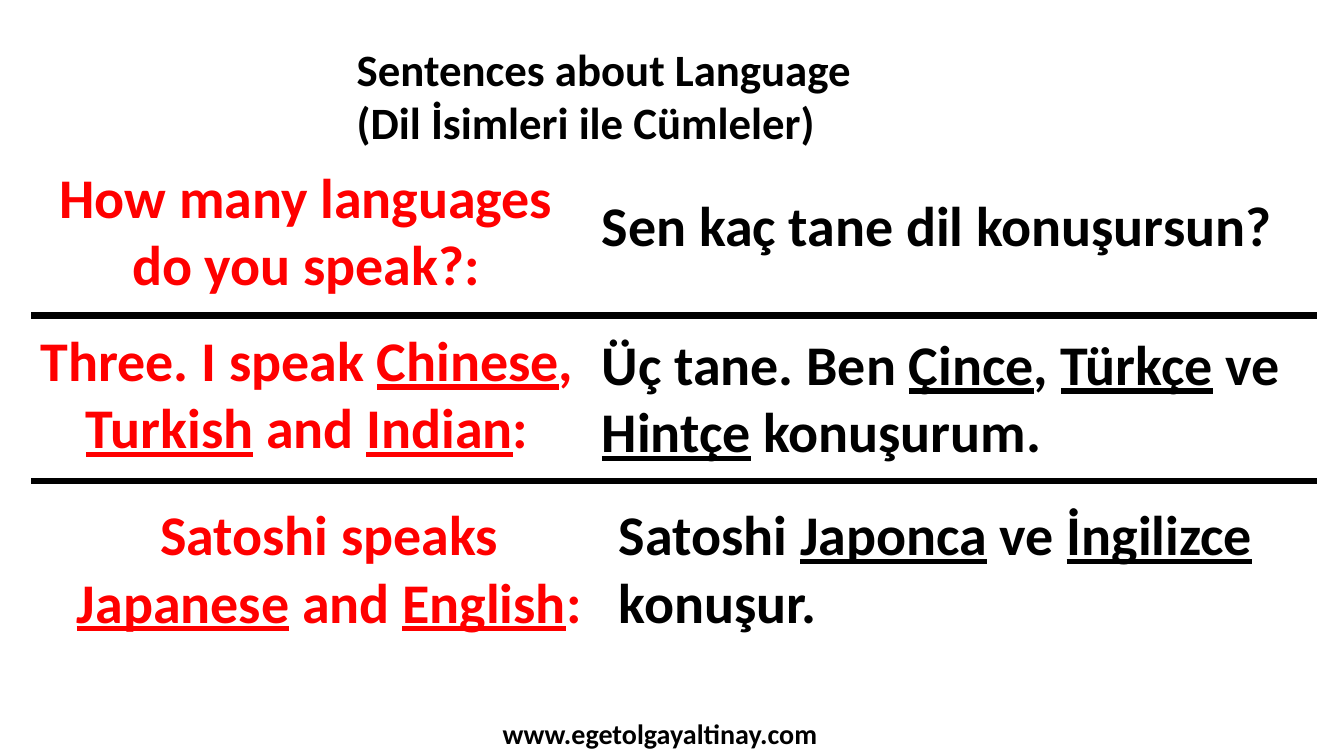
from lxml import etree
from pptx import Presentation
from pptx import util as u
from pptx.dml.color import RGBColor
from pptx.enum import shapes, text
from pptx.oxml.ns import qn

COLORS = {"black": "000000", "red": "FF0000"}
ENGLISH_W, TURKISH_W = 5.65, 7.09


class SlideBuilder:
    font = "Calibri"

    def __init__(self, slide):
        self.slide = slide

    def add_text(self, box, lines, size, color="black", centered=False):
        """Write bold lines; words between underscores are underlined."""
        sp = self.slide.shapes.add_textbox(*(u.Inches(v) for v in box))
        tf = sp.text_frame
        tf.word_wrap = True
        tf.auto_size = text.MSO_AUTO_SIZE.SHAPE_TO_FIT_TEXT
        for i, line in enumerate(lines):
            p = tf.add_paragraph() if i else tf.paragraphs[0]
            p.alignment = text.PP_ALIGN.CENTER if centered else text.PP_ALIGN.LEFT
            for j, part in enumerate(line.split("_")):
                r = p.add_run()
                r.text = part
                r.font.name = self.font
                r.font.size = u.Pt(size)
                r.font.bold = True
                r.font.underline = j % 2 == 1
                r.font.color.rgb = RGBColor.from_string(COLORS[color])

    def add_divider(self, y):
        line = self.slide.shapes.add_connector(
            shapes.MSO_CONNECTOR.STRAIGHT,
            u.Inches(0.31), u.Inches(y), u.Inches(13.06), u.Inches(y))
        line.line.color.rgb = RGBColor.from_string(COLORS["black"])
        line.line.width = u.Pt(4.5)
        etree.SubElement(line._element.spPr, qn("a:effectLst"))


def main():
    prs = Presentation()
    prs.slide_width, prs.slide_height = u.Inches(13.33), u.Inches(7.5)
    s = SlideBuilder(prs.slides.add_slide(prs.slide_layouts[6]))

    # Title
    s.add_text((3.44, 0.36, 6.3, 1.18),
               ["Sentences about Language", "(Dil İsimleri ile Cümleler)"], 32)

    # Sentence pairs: (left, top, height, sentence) in English, then Turkish
    pairs = [
        ((0.21, 1.56, 1.45, "How many languages do you speak?:"),
         (5.87, 1.84, 0.77, "Sen kaç tane dil konuşursun?")),
        ((0.22, 3.18, 1.45, "Three. I speak _Chinese_, _Turkish_ and _Indian_:"),
         (5.87, 3.22, 1.45, "Üç tane. Ben _Çince_, _Türkçe_ ve _Hintçe_ konuşurum.")),
        ((0.44, 4.91, 1.45, "Satoshi speaks _Japanese_ and _English_:"),
         (6.04, 4.91, 1.45, "Satoshi _Japonca_ ve _İngilizce_ konuşur.")),
    ]
    for (x, y, h, english), (tx, ty, th, turkish) in pairs:
        s.add_text((x, y, ENGLISH_W, h), [english], 40, "red", centered=True)
        s.add_text((tx, ty, TURKISH_W, th), [turkish], 40)

    # Dividers between the pairs
    for y in (3.13, 4.77):
        s.add_divider(y)

    # Web address
    s.add_text((4.46, 7.06, 4.17, 0.44), ["www.egetolgayaltinay.com"], 20, centered=True)

    prs.save("out.pptx")


if __name__ == "__main__":
    main()
